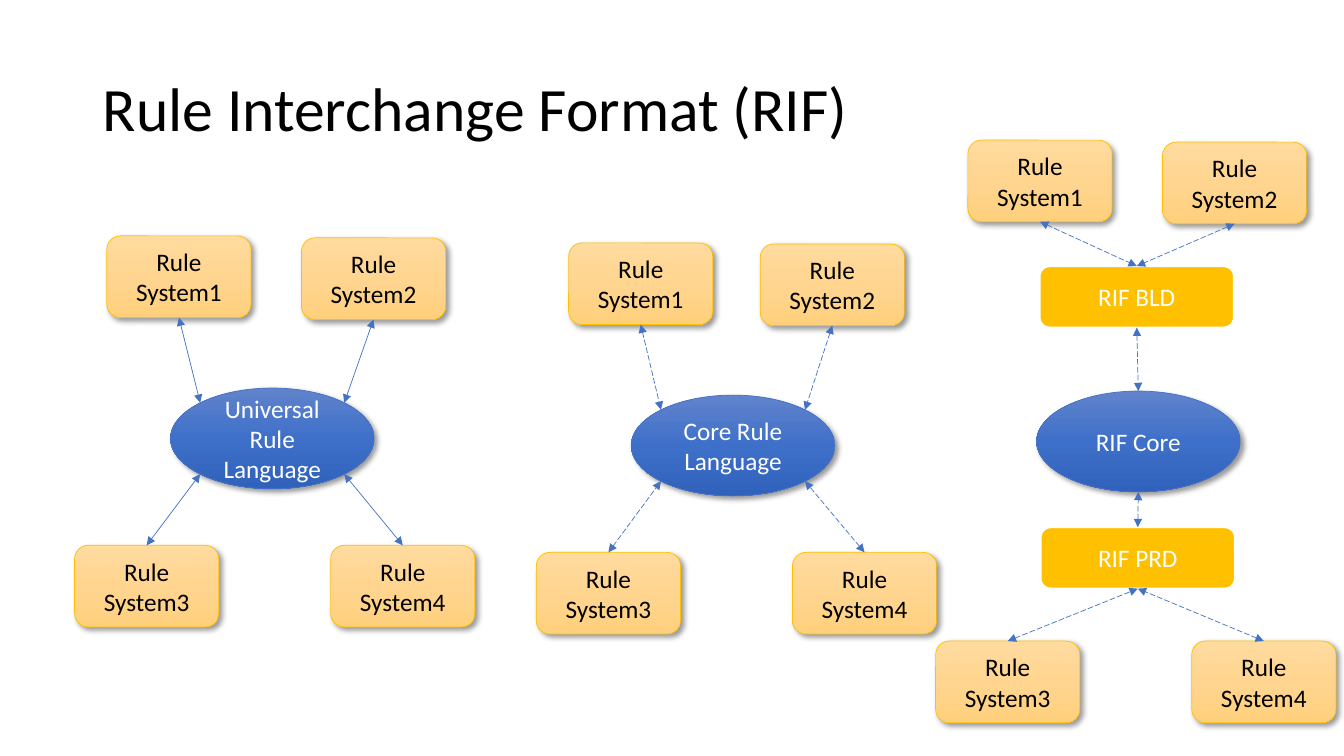
import math
from copy import deepcopy
from dataclasses import dataclass

from pptx import Presentation
from pptx import util as u
from pptx.dml.color import RGBColor
from pptx.enum import dml, shapes, text
from pptx.oxml import parse_xml
from pptx.oxml.ns import nsdecls, qn

EMU_PER_PX = 9144
FONT = "Calibri"
LINK_COLOUR = "4472C4"
TOP, BOTTOM = 0, 2
OVAL_TOP, OVAL_TOP_LEFT, OVAL_BOTTOM_LEFT = 0, 1, 3
OVAL_BOTTOM, OVAL_BOTTOM_RIGHT, OVAL_TOP_RIGHT = 4, 5, 7


@dataclass(frozen=True)
class Style:
    preset: shapes.MSO_SHAPE
    width: int
    height: int
    fills: tuple[str, ...]
    line: str
    line_width: float
    font_colour: str
    shadow: bool


@dataclass(frozen=True)
class Node:
    label: str
    style: Style
    left: int
    top: int


@dataclass(frozen=True)
class Link:
    start: str
    start_site: int
    end: str
    end_site: int


@dataclass(frozen=True)
class Diagram:
    nodes: tuple[Node, ...]
    links: tuple[Link, ...]
    dashed: bool


SYSTEM = Style(shapes.MSO_SHAPE.ROUNDED_RECTANGLE, 143, 81,
               ("FFDB9E", "FFD590", "FFD07C"), "FFC000", 0.5, "000000", True)
HUB = Style(shapes.MSO_SHAPE.OVAL, 202, 100,
            ("6183CB", "3E70CA", "3062BB"), "4472C4", 0.5, "FFFFFF", True)
DIALECT = Style(shapes.MSO_SHAPE.ROUNDED_RECTANGLE, 193, 61,
                ("FFC000",), "FFFFFF", 1.5, "FFFFFF", False)


def px(length: float) -> int:
    return round(length * EMU_PER_PX)


def colour(value: str) -> RGBColor:
    return RGBColor.from_string(value)


def systems(*corners: tuple[int, int]) -> tuple[Node, ...]:
    return tuple(Node(f"Rule System{number}", SYSTEM, left, top)
                 for number, (left, top) in enumerate(corners, 1))


def star_links(hub: str) -> tuple[Link, ...]:
    return (
        Link("Rule System1", BOTTOM, hub, OVAL_TOP_LEFT),
        Link("Rule System2", BOTTOM, hub, OVAL_TOP_RIGHT),
        Link("Rule System3", TOP, hub, OVAL_BOTTOM_LEFT),
        Link("Rule System4", TOP, hub, OVAL_BOTTOM_RIGHT),
    )


DIAGRAMS = (
    Diagram(
        systems((106, 234), (299, 236), (74, 541), (328, 541))
        + (Node("Universal Rule Language", HUB, 169, 385),),
        star_links("Universal Rule Language"), False),
    Diagram(
        systems((564, 241), (754, 242), (532, 548), (786, 548))
        + (Node("Core Rule Language", HUB, 626, 392),),
        star_links("Core Rule Language"), True),
    Diagram(
        systems((960, 139), (1153, 141), (928, 636), (1182, 636))
        + (Node("RIF Core", HUB, 1028, 388),
           Node("RIF BLD", DIALECT, 1031, 264),
           Node("RIF PRD", DIALECT, 1032, 523)),
        (Link("Rule System1", BOTTOM, "RIF BLD", TOP),
         Link("Rule System2", BOTTOM, "RIF BLD", TOP),
         Link("RIF BLD", BOTTOM, "RIF Core", OVAL_TOP),
         Link("RIF PRD", TOP, "RIF Core", OVAL_BOTTOM),
         Link("Rule System3", TOP, "RIF PRD", BOTTOM),
         Link("Rule System4", TOP, "RIF PRD", BOTTOM)), True),
)


def write(paragraph, words: str, size: int, font_colour: str) -> None:
    run = paragraph.add_run()
    run.text = words
    run.font.name = FONT
    run.font.size = u.Pt(size)
    run.font.color.rgb = colour(font_colour)


def fill_shape(shape, fills: tuple[str, ...]) -> None:
    if len(fills) == 1:
        shape.fill.solid()
        shape.fill.fore_color.rgb = colour(fills[0])
        return
    shape.fill.gradient()
    shape.fill.gradient_angle = 270
    stop_list = shape.element.spPr.find(".//" + qn("a:gsLst"))
    stop_list.append(deepcopy(stop_list[0]))
    for index, (stop, value) in enumerate(zip(shape.fill.gradient_stops, fills)):
        stop.position = index / (len(fills) - 1)
        stop.color.rgb = colour(value)


def add_node(slide, node: Node):
    style = node.style
    shape = slide.shapes.add_shape(
        style.preset, px(node.left), px(node.top), px(style.width), px(style.height))
    fill_shape(shape, style.fills)
    shape.line.color.rgb = colour(style.line)
    shape.line.width = u.Pt(style.line_width)
    shape.shadow.inherit = False
    if style.shadow:
        shape.element.spPr.find(qn("a:effectLst")).append(parse_xml(
            f'<a:outerShdw {nsdecls("a")} blurRad="50800" dist="38100" '
            'dir="2700000" algn="tl" rotWithShape="0"><a:srgbClr val="000000">'
            '<a:alpha val="40000"/></a:srgbClr></a:outerShdw>'))
    frame = shape.text_frame
    frame.word_wrap = True
    frame.vertical_anchor = text.MSO_ANCHOR.MIDDLE
    paragraph = frame.paragraphs[0]
    paragraph.alignment = text.PP_ALIGN.CENTER
    write(paragraph, node.label, 18, style.font_colour)
    return shape


def site_point(node: Node, site: int) -> tuple[int, int]:
    style = node.style
    center_x = node.left + style.width / 2
    center_y = node.top + style.height / 2
    angle = math.radians(90 + (45 if style is HUB else 90) * site)
    return (px(center_x + style.width / 2 * math.cos(angle)),
            px(center_y - style.height / 2 * math.sin(angle)))


def add_link(slide, link: Link, nodes: dict[str, Node], drawn: dict, dashed: bool) -> None:
    start, end = nodes[link.start], nodes[link.end]
    connector = slide.shapes.add_connector(
        shapes.MSO_CONNECTOR.STRAIGHT,
        *site_point(start, link.start_site), *site_point(end, link.end_site))
    if start.style is not HUB:
        connector.begin_connect(drawn[link.start], link.start_site)
    if end.style is not HUB:
        connector.end_connect(drawn[link.end], link.end_site)
    connector.line.color.rgb = colour(LINK_COLOUR)
    connector.line.width = u.Pt(0.5)
    if dashed:
        connector.line.dash_style = dml.MSO_LINE.LONG_DASH
    properties = connector.element.spPr
    for tag in ("headEnd", "tailEnd"):
        properties.find(qn("a:ln")).append(
            parse_xml(f'<a:{tag} {nsdecls("a")} type="triangle"/>'))
    properties.append(parse_xml(f'<a:effectLst {nsdecls("a")}/>'))


def add_title(slide, words: str) -> None:
    frame = slide.shapes.add_textbox(px(92), px(38), px(1150), px(145)).text_frame
    frame.word_wrap = True
    frame.vertical_anchor = text.MSO_ANCHOR.MIDDLE
    paragraph = frame.paragraphs[0]
    paragraph.line_spacing = 0.9
    write(paragraph, words, 44, "000000")


def main() -> None:
    presentation = Presentation()
    presentation.slide_width = px(1333)
    presentation.slide_height = px(750)
    slide = presentation.slides.add_slide(presentation.slide_layouts[6])
    add_title(slide, "Rule Interchange Format (RIF)")
    for diagram in DIAGRAMS:
        nodes = {node.label: node for node in diagram.nodes}
        drawn = {label: add_node(slide, node) for label, node in nodes.items()}
        for link in diagram.links:
            add_link(slide, link, nodes, drawn, diagram.dashed)
    presentation.save("out.pptx")


if __name__ == "__main__":
    main()
